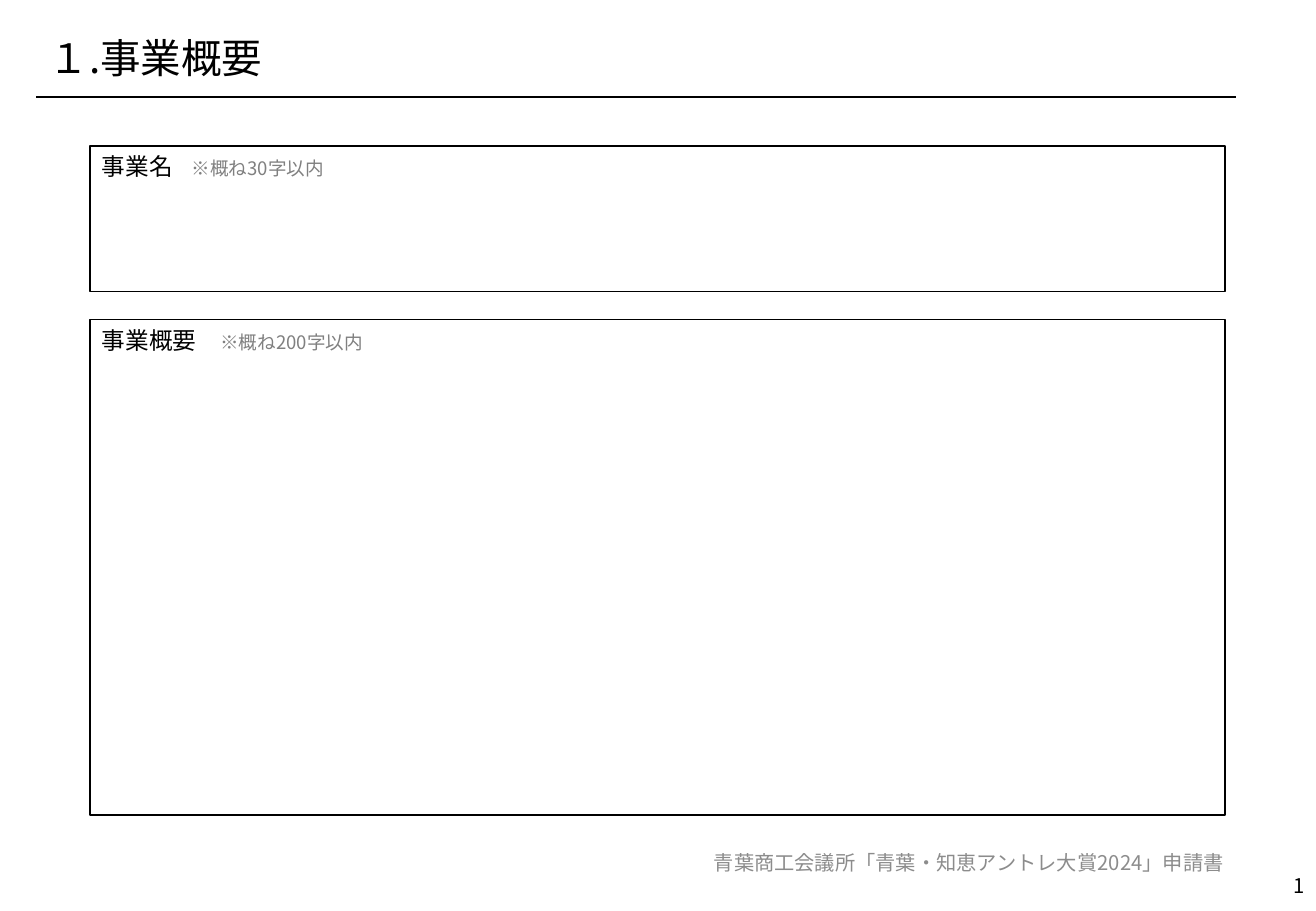
import pptx
import pptx.dml.color
import pptx.enum.lang
import pptx.enum.shapes
import pptx.enum.text
import pptx.oxml.ns
import pptx.util
from lxml import etree

Inches, Pt = pptx.util.Inches, pptx.util.Pt
RGBColor = pptx.dml.color.RGBColor
PP_ALIGN = pptx.enum.text.PP_ALIGN
MSO_ANCHOR = pptx.enum.text.MSO_ANCHOR
qn = pptx.oxml.ns.qn

FONT = "Noto Sans CJK JP"
BLACK = RGBColor(0x00, 0x00, 0x00)
HINT_GRAY = RGBColor(0x80, 0x80, 0x80)
FOOTER_GRAY = RGBColor(0x8C, 0x8C, 0x8C)


def add_run(p, text, size=12, color=BLACK):
    r = p.add_run()
    r.text = text
    r.font.size = Pt(size)
    r.font.color.rgb = color
    r.font.name = FONT
    r.font.language_id = pptx.enum.lang.MSO_LANGUAGE_ID.JAPANESE
    # The East Asian typeface has no public setter.
    etree.SubElement(r.font._element, qn("a:ea"), typeface=FONT)


def format_frame(sp, anchor, align=PP_ALIGN.LEFT):
    """Set the text frame's layout and return its first paragraph."""
    tf = sp.text_frame
    tf.word_wrap = True
    tf.auto_size = pptx.enum.text.MSO_AUTO_SIZE.NONE
    tf.vertical_anchor = anchor
    p = tf.paragraphs[0]
    p.alignment = align
    return p


def add_heading(s, text, left, top, width, height, rule_width):
    """Place the title with a rule along its lower edge."""
    sp = s.shapes.title
    sp.left, sp.top = Inches(left), Inches(top)
    sp.width, sp.height = Inches(width), Inches(height)
    p = format_frame(sp, MSO_ANCHOR.MIDDLE)
    p.line_spacing = 0.9
    add_run(p, text, size=24)

    y = Inches(top + height)
    rule = s.shapes.add_connector(pptx.enum.shapes.MSO_CONNECTOR.STRAIGHT,
                                  Inches(left), y, Inches(left + rule_width), y)
    rule.line.color.rgb = BLACK
    rule.line.width = Pt(1)
    etree.SubElement(rule._element.spPr, qn("a:effectLst"))


def add_entry_box(s, label, hint, left, top, width, height):
    sp = s.shapes.add_shape(pptx.enum.shapes.MSO_SHAPE.RECTANGLE, Inches(left),
                            Inches(top), Inches(width), Inches(height))
    sp.shadow.inherit = False
    sp.fill.background()
    sp.line.color.rgb = BLACK
    sp.line.width = Pt(1)
    p = format_frame(sp, MSO_ANCHOR.TOP)
    add_run(p, label, size=14)
    add_run(p, hint, size=11, color=HINT_GRAY)


def add_footer_text(s, text, left, top, width, height, color=BLACK):
    sp = s.shapes.add_textbox(Inches(left), Inches(top), Inches(width), Inches(height))
    add_run(format_frame(sp, MSO_ANCHOR.MIDDLE, PP_ALIGN.RIGHT), text, color=color)


def build_summary_slide(prs):
    s = prs.slides.add_slide(prs.slide_layouts[5])
    add_heading(s, "１.事業概要", 0.3, 0.19, 9.05, 0.61, rule_width=9.87)
    add_entry_box(s, "事業名", "　※概ね30字以内", 0.74, 1.2, 9.34, 1.2)
    add_entry_box(s, "事業概要　", "※概ね200字以内", 0.74, 2.63, 9.34, 4.08)
    add_footer_text(s, "青葉商工会議所「青葉・知恵アントレ大賞2024」申請書",
                    4.91, 6.9, 5.26, 0.4, color=FOOTER_GRAY)
    add_footer_text(s, "1", 10.44, 7.08, 0.4, 0.42)


def main():
    prs = pptx.Presentation()
    prs.slide_width, prs.slide_height = Inches(10.83), Inches(7.5)
    build_summary_slide(prs)
    prs.save("out.pptx")


if __name__ == "__main__":
    main()
